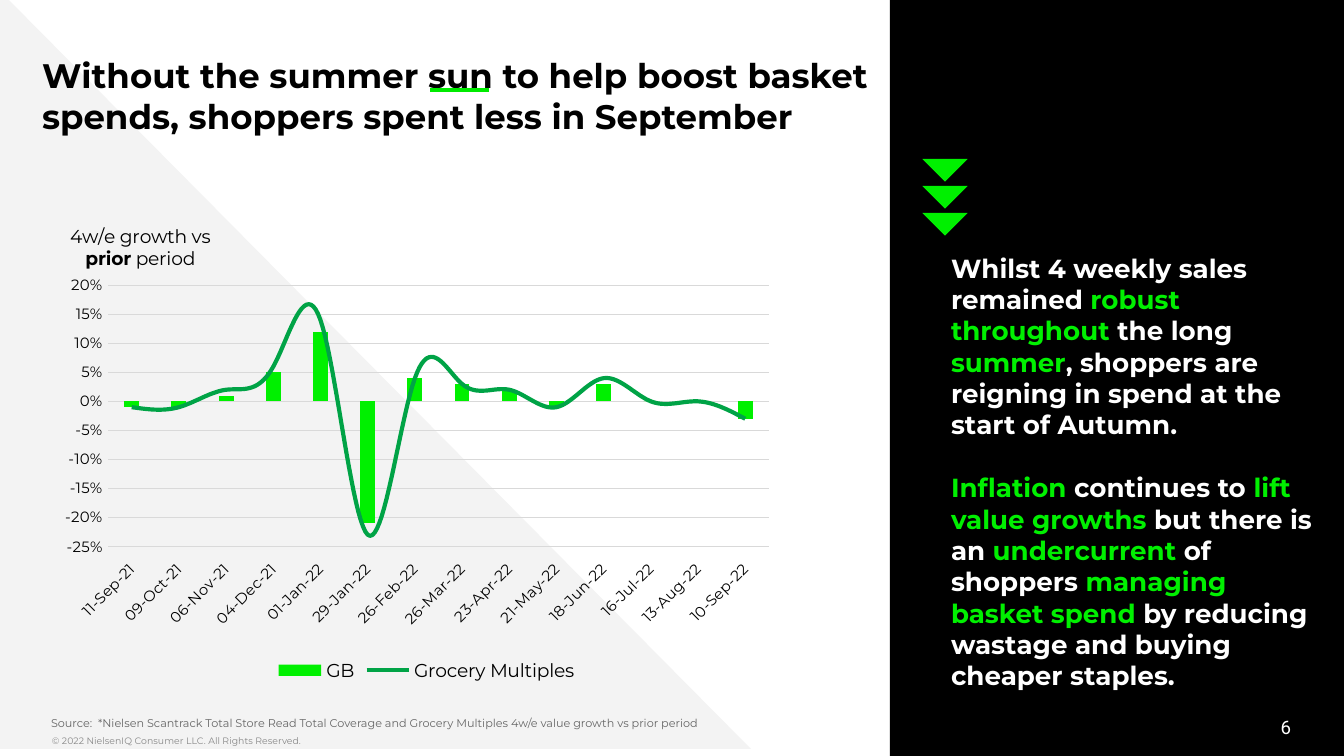
import dataclasses
import typing

import pptx
import pptx.chart.data
import pptx.dml.color
import pptx.enum.chart
import pptx.enum.shapes
import pptx.enum.text
import pptx.oxml
import pptx.oxml.ns
import pptx.util

SCALE = 914400 / 134.4
FONT = "Montserrat"
BLACK, WHITE, LIME, GREEN, GRID = "000000", "FFFFFF", "00F000", "00A346", "D9D9D9"
SHAPE = pptx.enum.shapes.MSO_SHAPE
ALIGN = pptx.enum.text.PP_ALIGN
ANCHOR = pptx.enum.text.MSO_ANCHOR
CHART = pptx.enum.chart

Runs = list[tuple[str, str]]


@dataclasses.dataclass
class Block:
    """A filled shape, boxed in px."""
    kind: int
    box: tuple[int, int, int, int]
    fill: str
    turn: int = 0


@dataclasses.dataclass
class Label:
    """A text box in px; each paragraph is a list of (text, colour)."""
    box: tuple[int, int, int, int]
    paras: list[Runs]
    size: float
    bold: bool = False
    face: str = FONT
    pad: int = 7
    frame: dict = dataclasses.field(default_factory=dict)
    para: dict = dataclasses.field(default_factory=dict)
    gap: float = 0


def px(num: float) -> int:
    return round(num * SCALE)


def rgb(code: str) -> pptx.dml.color.RGBColor:
    return pptx.dml.color.RGBColor.from_string(code)


def apply(item: typing.Any, values: dict) -> None:
    for name, value in values.items():
        setattr(item, name, value)


def style(font: typing.Any, size: float, color: str, bold: bool = False,
          face: str = FONT) -> None:
    apply(font, {"size": pptx.util.Pt(size), "bold": bold, "name": face})
    font.color.rgb = rgb(color)


def ink(line: typing.Any, color: str, width: float) -> None:
    line.color.rgb = rgb(color)
    line.width = pptx.util.Pt(width)


def add_block(slide: typing.Any, block: Block) -> None:
    shape = slide.shapes.add_shape(block.kind, *map(px, block.box))
    shape.shadow.inherit = False
    shape.fill.solid()
    shape.fill.fore_color.rgb = rgb(block.fill)
    shape.line.fill.background()
    shape.rotation = block.turn


def add_label(slide: typing.Any, label: Label) -> None:
    frame = slide.shapes.add_textbox(*map(px, label.box)).text_frame
    apply(frame, {"word_wrap": True, "margin_left": 0, "margin_right": 0,
                  "margin_top": px(label.pad), "margin_bottom": px(label.pad),
                  **label.frame})
    for i, runs in enumerate(label.paras):
        para = frame.add_paragraph() if i else frame.paragraphs[0]
        apply(para, label.para)
        if i and label.gap:
            para.space_before = pptx.util.Pt(label.gap)
        for text, color in runs:
            run = para.add_run()
            run.text = text
            style(run.font, label.size, color, label.bold, label.face)


def add_rule(slide: typing.Any, left: int, right: int, y: int) -> None:
    rule = slide.shapes.add_connector(
        pptx.enum.shapes.MSO_CONNECTOR.STRAIGHT, px(left), px(y), px(right), px(y))
    ink(rule.line, "00EB00", 2)
    props = rule._element.spPr
    props.append(props.makeelement(pptx.oxml.ns.qn("a:effectLst"), {}))


def tree(tag: str, inner: str) -> typing.Any:
    space = pptx.oxml.ns.nsdecls("c")
    return pptx.oxml.parse_xml(f"<c:{tag} {space}>{inner}</c:{tag}>")


def place(node: typing.Any, spot: int, values: dict) -> None:
    """Give a chart part a manual layout."""
    old = node.find(pptx.oxml.ns.qn("c:layout"))
    if old is not None:
        node.remove(old)
    inner = "".join(f'<c:{key} val="{value}"/>' for key, value in values.items())
    node.insert(spot, tree("layout", f"<c:manualLayout>{inner}</c:manualLayout>"))


def split_line(chart: typing.Any) -> None:
    """Move the second series from the columns to a line plot."""
    bars = chart.plots[0]._element
    series = bars.findall(pptx.oxml.ns.qn("c:ser"))[1]
    flag = series.find(pptx.oxml.ns.qn("c:invertIfNegative"))
    if flag is not None:
        series.remove(flag)
    axes = "".join(f'<c:axId val="{node.get("val")}"/>'
                   for node in bars.findall(pptx.oxml.ns.qn("c:axId")))
    plot = tree("lineChart", '<c:grouping val="standard"/><c:varyColors val="0"/>'
                             '<c:marker val="1"/>' + axes)
    plot.insert(2, series)
    bars.addnext(plot)


def add_growth(slide: typing.Any) -> None:
    data = pptx.chart.data.CategoryChartData(number_format="0%")
    data.categories = [
        "11-Sep-21", "09-Oct-21", "06-Nov-21", "04-Dec-21", "01-Jan-22",
        "29-Jan-22", "26-Feb-22", "26-Mar-22", "23-Apr-22", "21-May-22",
        "18-Jun-22", "16-Jul-22", "13-Aug-22", "10-Sep-22"]
    data.add_series("GB", [-0.01, -0.01, 0.01, 0.05, 0.12, -0.21, 0.04, 0.03,
                           0.02, -0.01, 0.03, 0, 0, -0.03])
    data.add_series("Grocery Multiples", [-0.01, -0.01, 0.02, 0.06, 0.14, -0.23,
                                          0.04, 0.03, 0.02, -0.01, 0.04, 0, 0, -0.03])
    chart = slide.shapes.add_chart(
        CHART.XL_CHART_TYPE.COLUMN_CLUSTERED,
        *map(px, (51, 214, 751, 473)), data).chart
    apply(chart, {"has_title": False, "has_legend": True})
    style(chart.font, 10, BLACK)
    apply(chart.legend, {"position": CHART.XL_LEGEND_POSITION.BOTTOM,
                         "include_in_layout": False})
    style(chart.legend.font, 10, BLACK)

    split_line(chart)
    bars, curve = chart.plots
    apply(bars, {"gap_width": 219, "vary_by_categories": False})
    column, line = bars.series[0], curve.series[0]
    column.invert_if_negative = False
    column.format.fill.solid()
    column.format.fill.fore_color.rgb = rgb(LIME)
    line.smooth = True
    line.marker.style = CHART.XL_MARKER_STYLE.NONE
    ink(line.format.line, GREEN, 2.25)

    dates, rates = chart.category_axis, chart.value_axis
    for axis in (dates, rates):
        apply(axis, {"major_tick_mark": CHART.XL_TICK_MARK.NONE,
                     "minor_tick_mark": CHART.XL_TICK_MARK.NONE})
        style(axis.tick_labels.font, 8, BLACK)
    dates.tick_label_position = CHART.XL_TICK_LABEL_POSITION.LOW
    dates._element.txPr.bodyPr.set("rot", "-2700000")
    ink(dates.format.line, GRID, 0.75)
    apply(rates, {"minimum_scale": -0.25, "maximum_scale": 0.2, "major_unit": 0.05,
                  "has_major_gridlines": True, "has_title": True})
    apply(rates.tick_labels, {"number_format": "0%", "number_format_is_linked": False})
    rates.format.line.fill.background()
    ink(rates.major_gridlines.format.line, GRID, 0.75)

    title = rates.axis_title
    frame = title.text_frame
    frame._txBody.bodyPr.set("rot", "0")
    frame._txBody.bodyPr.set("vert", "horz")
    rows = [[("4w/e growth vs", False)], [("prior", True), (" period", False)]]
    for i, row in enumerate(rows):
        para = frame.add_paragraph() if i else frame.paragraphs[0]
        para.alignment = ALIGN.CENTER
        for text, bold in row:
            run = para.add_run()
            run.text = text
            style(run.font, 10, BLACK, bold)
    place(title._element, 1, {"xMode": "edge", "yMode": "edge", "x": 0.02, "y": 0.01})
    place(bars._element.getparent(), 0, {
        "layoutTarget": "inner", "xMode": "edge", "yMode": "edge",
        "x": 0.076, "y": 0.151, "w": 0.88, "h": 0.552})


BLOCKS = [Block(SHAPE.RECTANGLE, (890, 0, 454, 756), BLACK),
          Block(SHAPE.RIGHT_TRIANGLE, (0, -9, 751, 758), "F3F3F3")]
BLOCKS += [Block(SHAPE.RIGHT_TRIANGLE, (929, 143 + 27 * i, 32, 32), LIME, 315)
           for i in range(3)]

STORY = [
    [("Whilst 4 weekly sales remained ", WHITE), ("robust throughout", LIME),
     (" the long ", WHITE), ("summer", LIME),
     (", shoppers are reigning in spend at the start of Autumn.", WHITE)],
    [("Inflation", LIME), (" continues to ", WHITE), ("lift value growths ", LIME),
     ("but there is an ", WHITE), ("undercurrent", LIME), (" of shoppers ", WHITE),
     ("managing basket spend", LIME),
     (" by reducing wastage and buying cheaper staples.", WHITE)]]

LABELS = [
    Label((52, 730, 745, 27),
          [[("© 2022 NielsenIQ Consumer LLC. All Rights Reserved.", "888888")]], 5),
    Label((989, 707, 302, 40), [[("6", WHITE)]], 10, face="Roboto",
          frame={"vertical_anchor": ANCHOR.MIDDLE}, para={"alignment": ALIGN.RIGHT}),
    Label((42, 42, 856, 106),
          [[("Without the summer sun to help boost basket spends, "
             "shoppers spent less in September", BLACK)]], 18.2, True, pad=13),
    Label((951, 245, 370, 441), STORY, 14, True, gap=16.8,
          para={"line_spacing": pptx.util.Pt(16.8)}),
    Label((51, 710, 816, 27),
          [[("Source:  *Nielsen Scantrack Total Store Read Total Coverage and "
             "Grocery Multiples 4w/e value growth vs prior period", "666666")]],
          6, pad=13, frame={"vertical_anchor": ANCHOR.BOTTOM}),
]


def main() -> None:
    deck = pptx.Presentation()
    apply(deck, {"slide_width": px(1344), "slide_height": px(756)})
    slide = deck.slides.add_slide(deck.slide_layouts[6])
    for block in BLOCKS:
        add_block(slide, block)
    for label in LABELS:
        add_label(slide, label)
    add_rule(slide, 430, 489, 90)
    add_growth(slide)
    deck.save("out.pptx")


if __name__ == "__main__":
    main()
